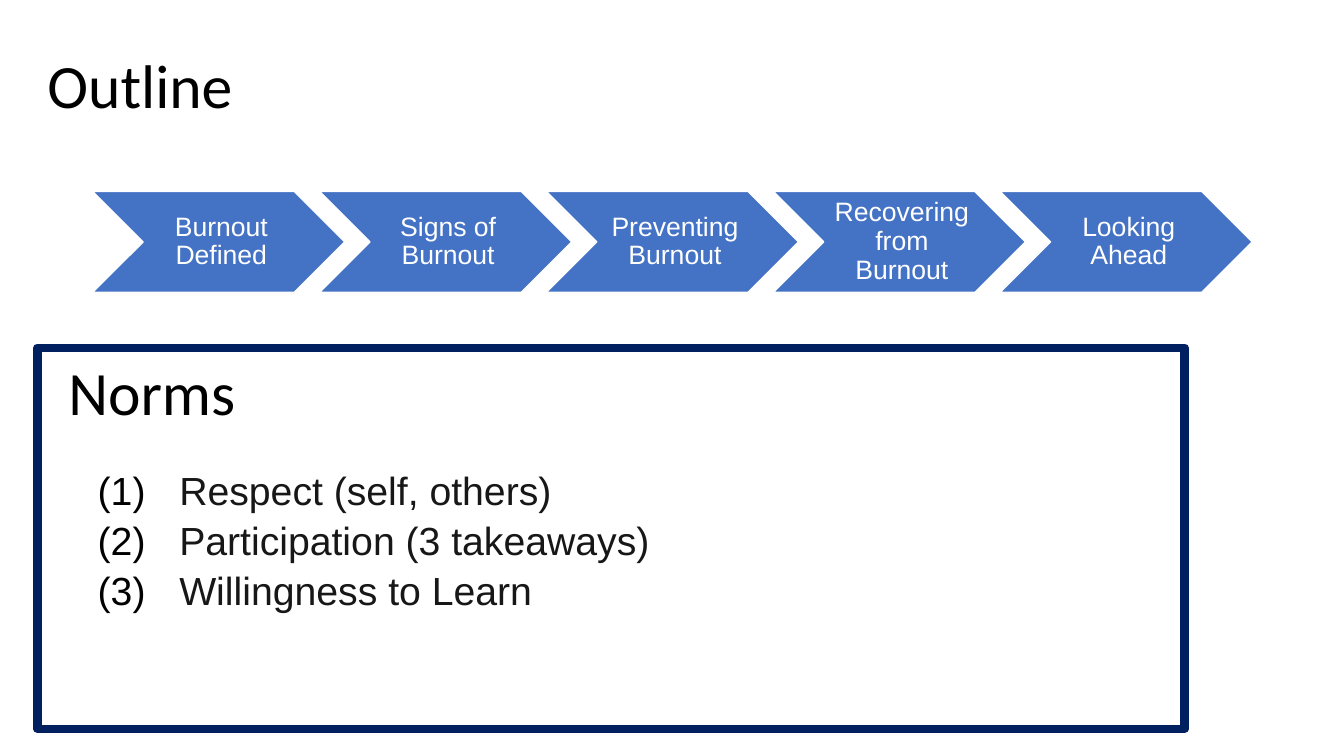
from dataclasses import dataclass

from lxml import etree
from pptx import Presentation
from pptx.dml.color import RGBColor
from pptx.enum.shapes import MSO_SHAPE
from pptx.enum.text import MSO_ANCHOR, MSO_AUTO_SIZE, PP_ALIGN
from pptx.oxml.ns import qn
from pptx.util import Pt

CHEVRON, RECT = MSO_SHAPE.CHEVRON, MSO_SHAPE.RECTANGLE
LEFT, CENTER = PP_ALIGN.LEFT, PP_ALIGN.CENTER
MIDDLE, NO_FIT = MSO_ANCHOR.MIDDLE, MSO_AUTO_SIZE.NONE
PX = 9144  # 100 px to the inch


@dataclass(frozen=True)
class Theme:
    black: str = "000000"
    white: str = "FFFFFF"
    blue: str = "4472C4"
    navy: str = "002060"
    ink: str = "181717"
    head: str = "Calibri"
    body: str = "Arial"
    title: int = 44
    item: int = 28
    step: int = 19


THEME = Theme()
STEPS = ["Burnout Defined", "Signs of Burnout", "Preventing Burnout",
         "Recovering from Burnout", "Looking Ahead"]
NORMS = ["Respect (self, others)", "Participation (3 takeaways)",
         "Willingness to Learn"]


def px(*sizes):
    return [size * PX for size in sizes]


def assign(target, values):
    for name, value in values.items():
        setattr(target, name, value)


def write(shape, lines, font, size, color, align=LEFT, gap=0.9, pads=(10, 5, 10, 5)):
    """Fill a shape with one paragraph per line."""
    frame = shape.text_frame
    frame.text = "\n".join(lines)
    sides = ("margin_left", "margin_top", "margin_right", "margin_bottom")
    assign(frame, {"word_wrap": True, "auto_size": NO_FIT,
                   "vertical_anchor": MIDDLE, **dict(zip(sides, px(*pads)))})
    for para in frame.paragraphs:
        assign(para, {"alignment": align, "line_spacing": gap,
                      "space_before": Pt(0), "space_after": Pt(0)})
        assign(para.runs[0].font, {"name": font, "size": Pt(size)})
        para.runs[0].font.color.rgb = RGBColor.from_string(color)


def draw(slide, kind, box, line, width, fill=None):
    """Add a preset shape with its line and optional fill."""
    shape = slide.shapes.add_shape(kind, *px(*box))
    shape.shadow.inherit = False
    if fill:
        shape.fill.solid()
        shape.fill.fore_color.rgb = RGBColor.from_string(fill)
    else:
        shape.fill.background()
    shape.line.color.rgb = RGBColor.from_string(line)
    shape.line.width = Pt(width)
    return shape


def number(para, indent, hang):
    """Number a paragraph as (1), (2), (3)."""
    props = para._p.get_or_add_pPr()
    props.set("marL", str(indent * PX))
    props.set("indent", str(-hang * PX))
    color = etree.SubElement(props, qn("a:buClr"))
    etree.SubElement(color, qn("a:srgbClr"), val=THEME.black)
    etree.SubElement(props, qn("a:buFont"), typeface=THEME.body)
    etree.SubElement(props, qn("a:buAutoNum"), type="arabicParenBoth")


def heading(slide, box):
    title = slide.shapes.title
    assign(title, dict(zip(("left", "top", "width", "height"), px(*box))))
    write(title, ["Outline"], THEME.head, THEME.title, THEME.black)


def process(slide, box):
    """Chevrons in a row, each overlapping the next one's notch."""
    left, top, width, height = box
    wide = 250
    pitch = (width - wide) // (len(STEPS) - 1)
    for i, step in enumerate(STEPS):
        arrow = draw(slide, CHEVRON, (left + i * pitch, top, wide, height),
                     THEME.white, 1, THEME.blue)
        write(arrow, [step], THEME.body, THEME.step, THEME.white,
              CENTER, pads=(8, 3, 3, 3))


def norms(slide, box):
    left, top, width, height = box
    # Panel heading
    label = slide.shapes.add_textbox(*px(left + 21, top - 25, 1150, 145))
    write(label, ["Norms"], THEME.head, THEME.title, THEME.black)
    # Framed list
    frame = draw(slide, RECT, box, THEME.navy, 6)
    etree.SubElement(frame.line._get_or_add_ln(), qn("a:round"))
    write(frame, NORMS, THEME.body, THEME.item, THEME.ink, gap=1.07)
    for para in frame.text_frame.paragraphs:
        para.level = 1
        number(para, 131, 81)


def main():
    deck = Presentation()
    deck.slide_width, deck.slide_height = px(1333, 750)
    slide = deck.slides.add_slide(deck.slide_layouts[5])
    heading(slide, (37, 15, 1150, 145))
    process(slide, (92, 190, 1150, 100))
    norms(slide, (37, 345, 1138, 378))
    deck.save("out.pptx")


if __name__ == "__main__":
    main()
